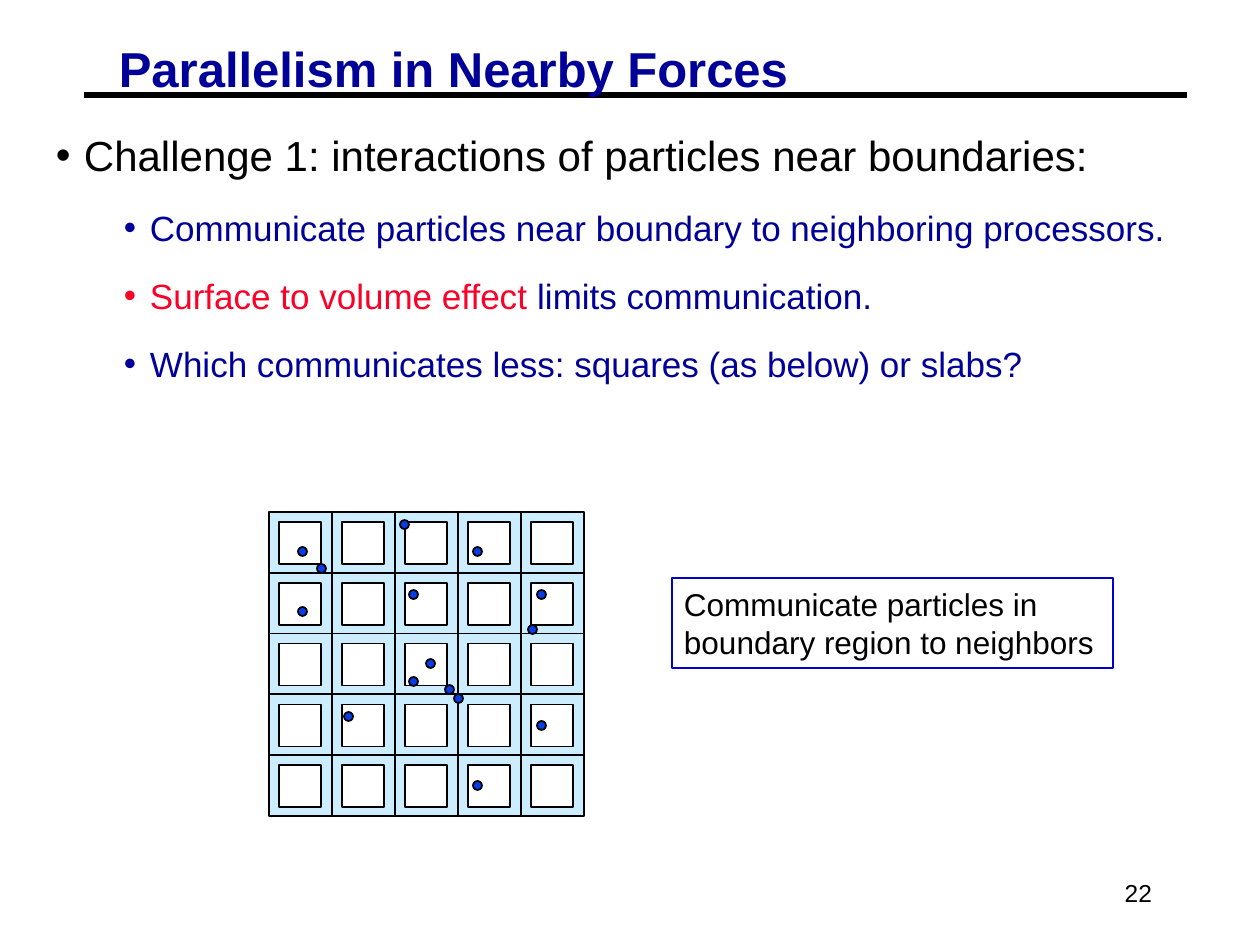
import lxml.etree
import pptx
import pptx.dml.color
import pptx.enum.shapes
import pptx.enum.text
import pptx.oxml.ns
import pptx.util

RGB = pptx.dml.color.RGBColor
BLACK = RGB(0x00, 0x00, 0x00)
WHITE = RGB(0xFF, 0xFF, 0xFF)
NAVY = RGB(0x00, 0x00, 0x99)
RED = RGB(0xFC, 0x01, 0x28)
BORDER = RGB(0x00, 0x00, 0xCC)
HALO = RGB(0xCC, 0xEC, 0xFF)
DOT = RGB(0x06, 0x3D, 0xE8)

KIND = pptx.enum.shapes.MSO_SHAPE
ALIGN = pptx.enum.text.PP_ALIGN
ANCHOR = pptx.enum.text.MSO_ANCHOR
SCALE = 914400 / 126

POINTS = [
    "Challenge 1: interactions of particles near boundaries:",
    "Communicate particles near boundary to neighboring processors.",
    "Surface to volume effect| limits communication.",
    "Which communicates less: squares (as below) or slabs?",
]
SPOTS = [
    (29, 35), (48, 52), (29, 95), (140, 165), (131, 8),
    (157, 147), (75, 200), (176, 173), (259, 113), (185, 182),
    (204, 35), (204, 269), (268, 209), (268, 78), (140, 78),
]


def px(n):
    return pptx.util.Emu(round(n * SCALE))


def style(run, size, color, bold=False):
    run.font.name = "Arial"
    run.font.size = pptx.util.Pt(size)
    run.font.color.rgb = color
    run.font.bold = bold


def inset(frame, side, top):
    frame.margin_left = frame.margin_right = px(side)
    frame.margin_top = frame.margin_bottom = px(top)


def shape(shapes, kind, box, fill, line):
    item = shapes.add_shape(kind, *map(px, box))
    item.shadow.inherit = False
    if fill is None:
        item.fill.background()
    else:
        item.fill.solid()
        item.fill.fore_color.rgb = fill
    item.line.color.rgb = line
    item.line.width = pptx.util.Pt(1)
    return item


def bullet(para, left, hang):
    props = para._p.get_or_add_pPr()
    props.set("marL", str(px(left)))
    props.set("indent", str(px(-hang)))
    qn = pptx.oxml.ns.qn
    lxml.etree.SubElement(props, qn("a:buFont")).set("typeface", "Arial")
    lxml.etree.SubElement(props, qn("a:buChar")).set("char", "•")


def rule(slide, left, right, y):
    line = slide.shapes.add_connector(
        pptx.enum.shapes.MSO_CONNECTOR.STRAIGHT, px(left), px(y), px(right), px(y))
    line.line.color.rgb = BLACK
    line.line.width = pptx.util.Pt(3.75)
    lxml.etree.SubElement(line._element.spPr, pptx.oxml.ns.qn("a:effectLst"))


def title(slide, box):
    frame = slide.shapes.add_textbox(*map(px, box)).text_frame
    frame.word_wrap = True
    inset(frame, 9, 4)
    frame.text = "Parallelism in Nearby Forces"
    para = frame.paragraphs[0]
    para.line_spacing = 0.87
    style(para.runs[0], 28, NAVY, True)


def body(slide, box):
    frame = slide.shapes.add_textbox(*map(px, box)).text_frame
    frame.word_wrap = True
    inset(frame, 9, 4)
    for i, text in enumerate(POINTS):
        para = frame.add_paragraph() if i else frame.paragraphs[0]
        para.level = 1 if i else 0
        para.space_before = pptx.util.Pt(14.8 if i else 3.6)
        bullet(para, *((94, 26) if i else (28, 28)))
        parts = text.split("|")
        for part in parts:
            run = para.add_run()
            run.text = part
            style(run, 20 if i else 24, NAVY if i else BLACK)
        if len(parts) > 1:
            para.runs[0].font.color.rgb = RED


def grid(slide, box):
    left, top, wide, high = box
    group = slide.shapes.add_group_shape()
    for col in range(5):
        for row in range(5):
            x = left + col * wide / 5
            y = top + row * high / 5
            shape(group.shapes, KIND.RECTANGLE, (x, y, wide / 5, high / 5), HALO, BLACK)
            shape(group.shapes, KIND.RECTANGLE, (x + 10, y + 10, 42, 42), WHITE, BLACK)


def dots(slide, box):
    left, top = box[:2]
    for x, y in SPOTS:
        shape(slide.shapes, KIND.OVAL, (left + x, top + y, 9, 9), DOT, BLACK)


def note(slide, box):
    frame = shape(slide.shapes, KIND.RECTANGLE, box, None, BORDER).text_frame
    frame.word_wrap = True
    frame.vertical_anchor = ANCHOR.MIDDLE
    inset(frame, 12, 6)
    frame.text = "Communicate particles in boundary region to neighbors"
    frame.paragraphs[0].alignment = ALIGN.LEFT
    style(frame.paragraphs[0].runs[0], 18, BLACK)


def number(slide, box):
    frame = slide.shapes.add_textbox(*map(px, box)).text_frame
    frame.word_wrap = False
    frame.vertical_anchor = ANCHOR.MIDDLE
    inset(frame, 13, 6)
    frame.text = "22"
    frame.paragraphs[0].alignment = ALIGN.RIGHT
    style(frame.paragraphs[0].runs[0], 14, BLACK)


def main():
    deck = pptx.Presentation()
    deck.slide_width = px(1260)
    deck.slide_height = px(945)
    slide = deck.slides.add_slide(deck.slide_layouts[6])
    field = (269, 512, 315, 304)
    rule(slide, 84, 1187, 95)
    number(slide, (903, 861, 262, 63))
    grid(slide, field)
    title(slide, (110, 43, 930, 58))
    body(slide, (47, 126, 1139, 263))
    note(slide, (672, 578, 441, 90))
    dots(slide, field)
    deck.save("out.pptx")


if __name__ == "__main__":
    main()
